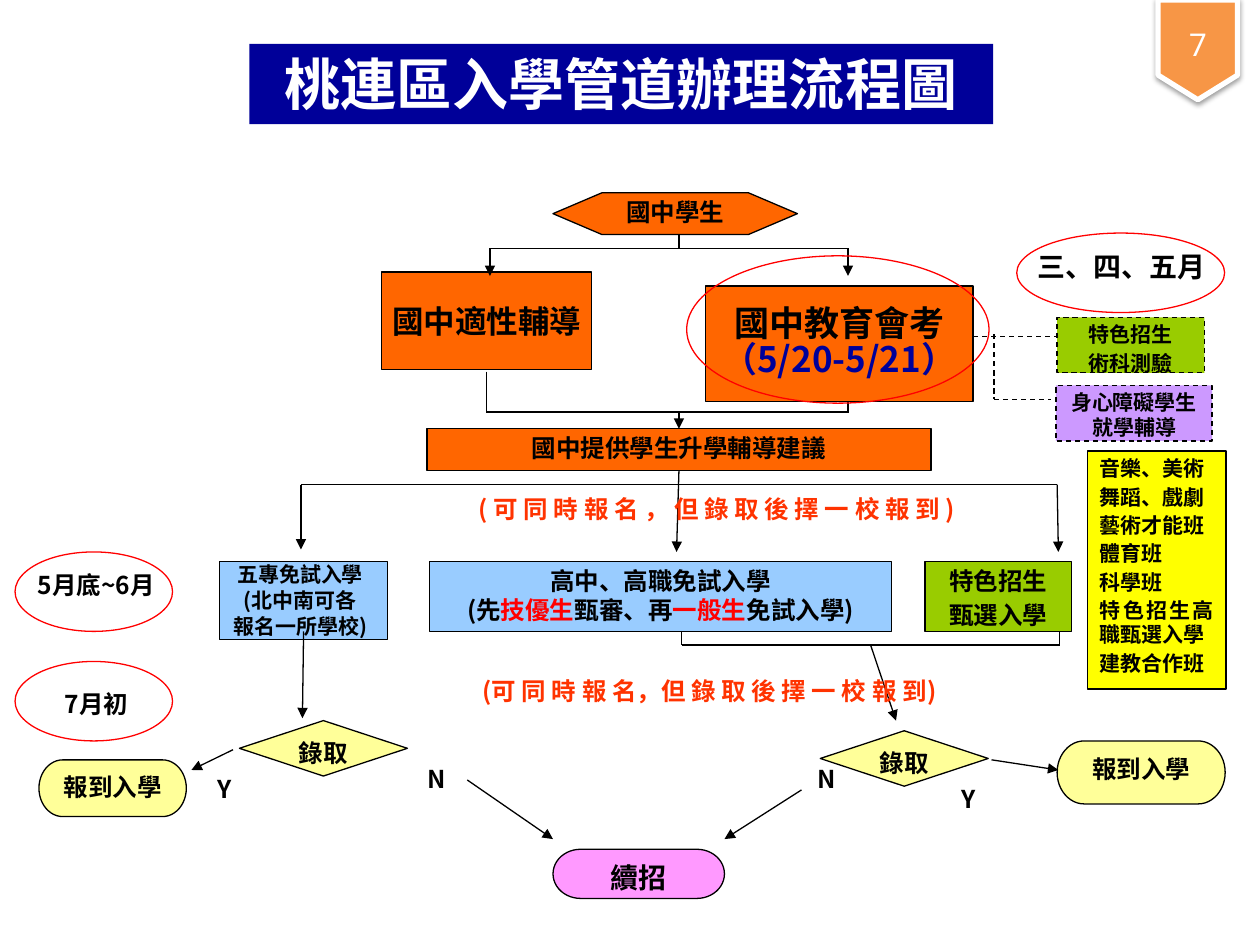
from pptx import Presentation
from pptx.util import Pt
from pptx.dml.color import RGBColor
from pptx.enum.dml import MSO_LINE
from pptx.enum.shapes import MSO_SHAPE as S, MSO_CONNECTOR
from pptx.enum.text import PP_ALIGN as A, MSO_ANCHOR as V
from pptx.oxml import parse_xml
from pptx.oxml.ns import qn, nsdecls
from lxml.etree import SubElement

HUES = {
    "black": "000000", "white": "FFFFFF", "navy": "000099", "red": "FF0000",
    "coral": "FF3300", "orange": "FF6600", "tag": "F79646", "blue": "99CCFF",
    "green": "99CC00", "cream": "FFFF99", "pink": "FF99FF",
    "violet": "CC99FF", "yellow": "FFFF00",
}
RGB = {name: RGBColor.from_string(code) for name, code in HUES.items()}
CJK = "Noto Sans CJK SC"

deck = Presentation()
deck.slide_width, deck.slide_height = Pt(720), Pt(540)
slide = deck.slides.add_slide(deck.slide_layouts[6])
shapes = slide.shapes


def write(shape, lines, size, hue="black", font=CJK, bold=True, align=A.CENTER,
          anchor=V.TOP, pad=(4.3, 2.2, 4.3, 2.2), gap=0.2, lead=None):
    """Fill a shape with lines; a line is text or a list of (text, hue)."""
    frame = shape.text_frame
    left, top, right, low = (Pt(n) for n in pad)
    look = {"word_wrap": True, "vertical_anchor": anchor, "margin_left": left,
            "margin_top": top, "margin_right": right, "margin_bottom": low}
    for key, val in look.items():
        setattr(frame, key, val)
    for i, line in enumerate(lines):
        para = frame.add_paragraph() if i else frame.paragraphs[0]
        para.alignment = align
        if i and gap:
            para.space_before = Pt(round(size * gap, 1))
        if lead:
            para.line_spacing = lead
        for text, tint in [(line, hue)] if isinstance(line, str) else line:
            run = para.add_run()
            run.text = text
            for key, val in {"name": font, "size": Pt(size), "bold": bold}.items():
                setattr(run.font, key, val)
            run.font.color.rgb = RGB[tint]
            SubElement(run.font._element, qn("a:ea")).set("typeface", CJK)


def draw(kind, at, fill=None, edge="black", width=0.75, dash=False):
    """Add a preset shape with its fill and outline."""
    shape = shapes.add_shape(kind, *(Pt(n) for n in at))
    shape.shadow.inherit = False
    if fill:
        shape.fill.solid()
        shape.fill.fore_color.rgb = RGB[fill]
    else:
        shape.fill.background()
    if edge:
        shape.line.color.rgb = RGB[edge]
        shape.line.width = Pt(width)
        if dash:
            shape.line.dash_style = MSO_LINE.DASH
    else:
        shape.line.fill.background()
    return shape


# Page tag
tag = draw(S.PENTAGON, (656, 5.8, 57, 45.4), "tag", "white", 3)
tag.rotation = 90
tag.adjustments[0] = 0.31
write(tag, ["7"], 18, "white", "Roboto", False, anchor=V.MIDDLE)
tag.text_frame._txBody.bodyPr.set("vert", "vert270")
glow = tag._element.spPr.find(qn("a:effectLst"))
glow.append(parse_xml(
    f'<a:outerShdw {nsdecls("a")} blurRad="39400" dist="20300" dir="5400000" '
    'rotWithShape="0"><a:srgbClr val="000000"><a:alpha val="38000"/>'
    '</a:srgbClr></a:outerShdw>'))

# Title
title = draw(S.RECTANGLE, (142.5, 25, 425, 46), "navy", None)
write(title, ["桃連區入學管道辦理流程圖"], 32, "white", "Calibri",
      pad=(7.2, 3.6, 7.2, 3.6))

# Flow boxes: kind, place, fill, size, lines, text format
BOX, END, TEST = S.FLOWCHART_PROCESS, S.FLOWCHART_TERMINATOR, S.FLOWCHART_DECISION
mid = {"anchor": V.MIDDLE}
boxes = [
    (S.FLOWCHART_PREPARATION, (316, 110.2, 139.7, 23.8), "orange", 14, ["國中學生"], {}),
    (BOX, (218, 155.5, 120, 55.5), "orange", 18, ["國中適性輔導"], mid),
    (BOX, (403.2, 163.4, 152.8, 66.2), "orange", 20,
     ["國中教育會考", [("（5/20-5/21）", "navy")]], {**mid, "gap": 0, "lead": 0.85}),
    (BOX, (244, 245, 288, 23.8), "orange", 14, ["國中提供學生升學輔導建議"], {}),
    (BOX, (125.3, 321, 96, 44.6), "blue", 12,
     ["五專免試入學", "(北中南可各", "報名一所學校)"],
     {"lead": 0.85, "pad": (0.7, 2.2, 4.3, 2.2)}),
    (BOX, (245.5, 321, 264, 39.8), "blue", 14,
     ["高中、高職免試入學",
      [("(先", "black"), ("技優生", "red"), ("甄審、再", "black"),
       ("一般生", "red"), ("免試入學)", "black")]], {"gap": 0}),
    (BOX, (528.5, 321, 84, 39.8), "green", 14, ["特色招生", "甄選入學"], {}),
    (TEST, (136.8, 411.8, 96, 31.7), "cream", 14, ["錄取"], {}),
    (TEST, (468.7, 417.6, 96, 31.7), "cream", 14, ["錄取"], {}),
    (END, (22.3, 434.2, 84.2, 32.4), "cream", 14, ["報到入學"], {}),
    (END, (604.1, 423.4, 96, 36), "cream", 14, ["報到入學"], {}),
    (END, (316, 485.3, 98, 28.1), "pink", 16, ["續招"], {}),
    (S.RECTANGLE, (621.4, 257.8, 79.2, 136), "yellow", 12,
     ["音樂、美術", "舞蹈、戲劇", "藝術才能班", "體育班", "科學班",
      "特色招生高職甄選入學", "建教合作班"],
     {"align": A.JUSTIFY, "lead": 0.96, "pad": (7.2, 3.6, 7.2, 3.6)}),
]
for kind, at, fill, size, lines, form in boxes:
    write(draw(kind, at, fill), lines, size, **form)

# Dashed side boxes
for at, fill, lines in [
    ((604.1, 181.4, 84.2, 31.7), "green", ["特色招生", "術科測驗"]),
    ((603.4, 220.3, 89.3, 31.7), "violet", ["身心障礙學生就學輔導"]),
]:
    write(draw(S.RECTANGLE, at, fill, dash=True), lines, 12)

# Lines: start x, y, end x, y
plain = [
    (388, 134, 388, 142), (280, 142, 484.6, 142),
    (484.6, 229.6, 484.6, 235.4), (278, 235.4, 485.3, 235.4),
    (278, 212.4, 278, 235.4), (172, 276.8, 604.1, 276.8),
    (389.5, 360.8, 389.5, 368.6), (605.5, 360.8, 605.5, 368.6),
    (389.5, 368.6, 605.5, 368.6),
]
arrows = [
    (280, 142, 280, 157.7), (484.6, 142, 484.6, 157.7),
    (388, 235, 388, 245), (388, 268.6, 386.6, 315.4),
    (172, 277, 172, 314), (604.1, 277, 604.8, 315.4),
    (173.5, 360.8, 172.8, 410.4), (497.5, 368.6, 512, 411.8),
    (566.6, 434.2, 604.8, 440), (133.2, 428.4, 109.4, 440),
    (267, 445.7, 316, 479.5), (458, 451.4, 414, 479.5),
]
dashes = [
    (556, 192.2, 604.1, 192.2), (568, 191, 568, 228.2), (568, 228.2, 600.5, 228.2),
]
for style, group in {"plain": plain, "arrow": arrows, "dash": dashes}.items():
    for ends in group:
        link = shapes.add_connector(MSO_CONNECTOR.STRAIGHT, *(Pt(n) for n in ends))
        link.line.color.rgb = RGB["black"]
        link.line.width = Pt(0.75)
        if style == "dash":
            link.line.dash_style = MSO_LINE.DASH
        if style == "arrow":
            SubElement(link.line._get_or_add_ln(), qn("a:tailEnd")).set("type", "triangle")
        SubElement(link._element.spPr, qn("a:effectLst"))

# Red ovals
for at in [(8.6, 315.4, 90, 45.4), (8.6, 378, 90, 45.4),
           (581, 133.2, 118.8, 45.4), (392.4, 146.2, 172.8, 84.2)]:
    draw(S.OVAL, at, None, "red")

# Free labels: place, text, format
left = {"align": A.LEFT}
note = {**left, "hue": "coral", "pad": (0.7, 2.2, 0.7, 2.2)}
labels = [
    ((8.6, 324, 93, 20), "5月底~6月", mid),
    ((8.6, 392, 93, 20), "7月初", mid),
    ((586, 139, 114.5, 26.6), "三、四、五月",
     {**left, "size": 16, "pad": (7.2, 3.6, 7.2, 3.6)}),
    ((272.9, 280, 392.4, 23.8), "( 可 同 時 報 名 ， 但 錄 取 後 擇 一 校 報 到 )", note),
    ((275, 383.8, 311.8, 15.8), "(可 同 時 報 名，但 錄 取 後 擇 一 校 報 到)", note),
    ((239.8, 434.2, 24.5, 15.8), "N", left), ((463, 434.2, 24.5, 15.8), "N", left),
    ((120.2, 440, 23.8, 15.8), "Y", left), ((545, 445.7, 23.8, 15.8), "Y", left),
]
for at, text, form in labels:
    write(shapes.add_textbox(*(Pt(n) for n in at)), [text], **{"size": 14, **form})

deck.save("out.pptx")
